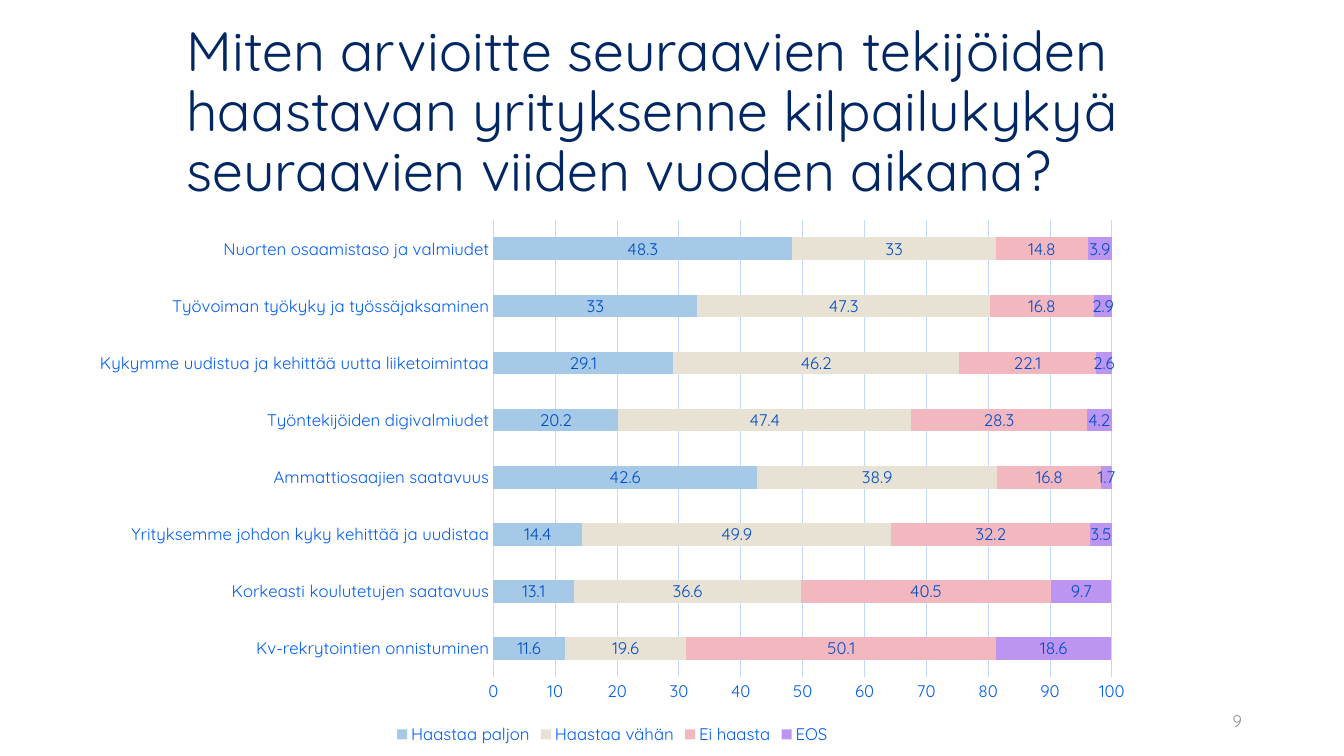
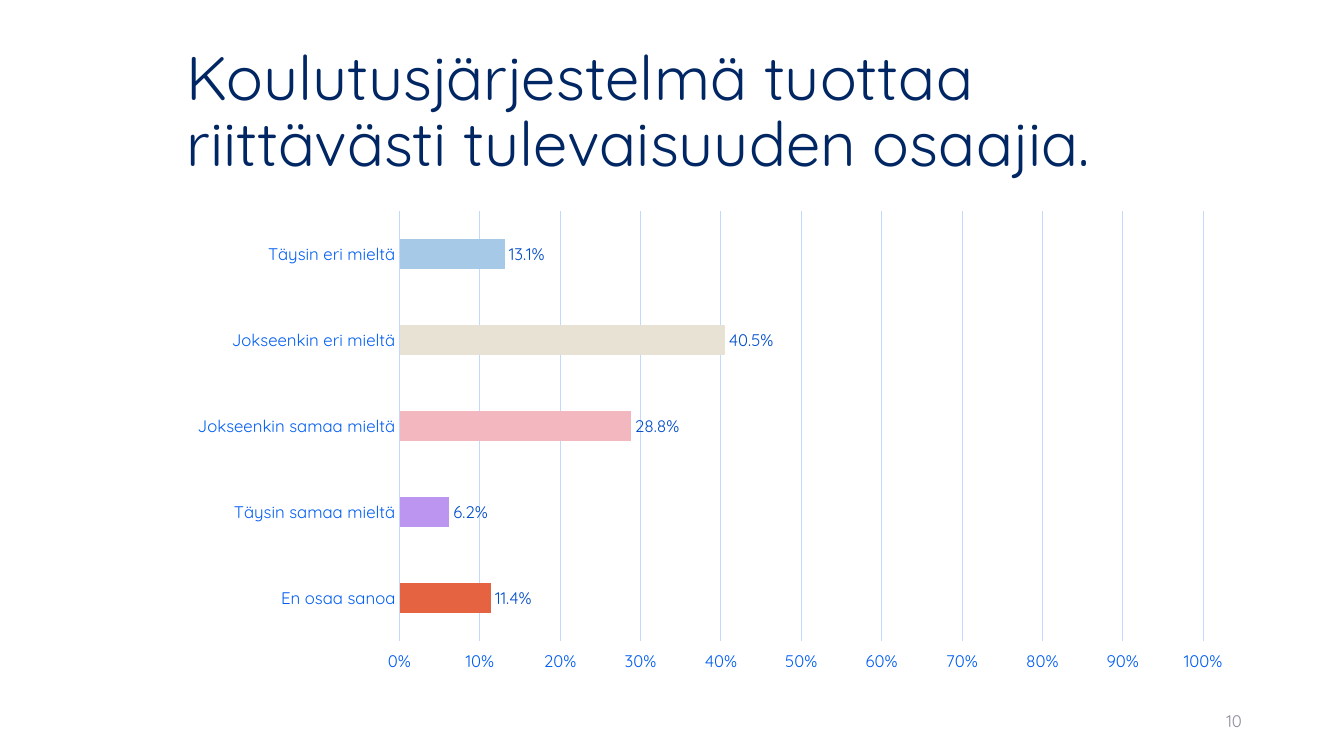
from dataclasses import dataclass

from pptx import Presentation
from pptx.chart.data import CategoryChartData
from pptx.dml.color import RGBColor
from pptx.enum.chart import (
    XL_CHART_TYPE,
    XL_LABEL_POSITION,
    XL_LEGEND_POSITION,
    XL_TICK_LABEL_POSITION,
    XL_TICK_MARK,
)
from pptx.enum.text import MSO_ANCHOR, PP_ALIGN
from pptx.util import Inches, Pt


@dataclass(frozen=True)
class Theme:
    font: str = "Quicksand"
    navy: str = "002663"
    axis: str = "005DF3"
    label: str = "004DCA"
    grid: str = "C1D9FF"
    number: str = "8C8E9F"
    bars: tuple = ("A5C9E7", "E8E2D5", "F2B7BF", "BB95EF", "E66342")
    small: float = 12
    base: float = 10
    line: float = 0.75


THEME = Theme()
TITLE_BOX = (1.75, 0.4, 10.59, 1.45)
NUMBER_BOX = (9.42, 6.95, 3, 0.4)

FACTORS = (
    ("Kv-rekrytointien onnistuminen", (11.6, 19.6, 50.1, 18.6)),
    ("Korkeasti koulutetujen saatavuus", (13.1, 36.6, 40.5, 9.7)),
    ("Yrityksemme johdon kyky kehittää ja uudistaa", (14.4, 49.9, 32.2, 3.5)),
    ("Ammattiosaajien saatavuus", (42.6, 38.9, 16.8, 1.7)),
    ("Työntekijöiden digivalmiudet", (20.2, 47.4, 28.3, 4.2)),
    ("Kykymme uudistua ja kehittää uutta liiketoimintaa", (29.1, 46.2, 22.1, 2.6)),
    ("Työvoiman työkyky ja työssäjaksaminen", (33, 47.3, 16.8, 2.9)),
    ("Nuorten osaamistaso ja valmiudet", (48.3, 33, 14.8, 3.9)),
)
RATINGS = ("Haastaa paljon", "Haastaa vähän", "Ei haasta", "EOS")
OPINIONS = (
    ("Täysin eri mieltä", (0.131,)),
    ("Jokseenkin eri mieltä", (0.405,)),
    ("Jokseenkin samaa mieltä", (0.288,)),
    ("Täysin samaa mieltä", (0.062,)),
    ("En osaa sanoa", (0.114,)),
)


def style_font(font, size, color):
    font.name = THEME.font
    font.size = Pt(size)
    font.color.rgb = RGBColor.from_string(color)


def paint(fill, color):
    fill.solid()
    fill.fore_color.rgb = RGBColor.from_string(color)


def style_line(line):
    line.width = Pt(THEME.line)
    line.color.rgb = RGBColor.from_string(THEME.grid)


def add_text(page, box, text, size, color, align=PP_ALIGN.LEFT, spacing=1.0):
    frame = page.shapes.add_textbox(*map(Inches, box)).text_frame
    frame.word_wrap = True
    frame.vertical_anchor = MSO_ANCHOR.MIDDLE
    para = frame.paragraphs[0]
    para.text = text
    para.alignment = align
    para.line_spacing = spacing
    style_font(para.font, size, color)


def add_page(deck, title, title_size, number):
    page = deck.slides.add_slide(deck.slide_layouts[6])
    add_text(page, TITLE_BOX, title, title_size, THEME.navy, spacing=0.9)
    add_text(page, NUMBER_BOX, str(number), THEME.small, THEME.number, PP_ALIGN.RIGHT)
    return page


def add_bar_chart(page, box, kind, names, rows, top, axis_format, label_format, position):
    data = CategoryChartData()
    data.categories = [category for category, _ in rows]
    for name, values in zip(names, zip(*(values for _, values in rows))):
        data.add_series(name, values)
    chart = page.shapes.add_chart(kind, *map(Inches, box), data).chart
    chart.has_title = False
    chart.has_legend = False
    style_font(chart.font, THEME.base, THEME.navy)

    for axis in (chart.category_axis, chart.value_axis):
        axis.major_tick_mark = axis.minor_tick_mark = XL_TICK_MARK.NONE
        style_font(axis.tick_labels.font, THEME.small, THEME.axis)
    style_line(chart.category_axis.format.line)
    scale = chart.value_axis
    scale.minimum_scale = 0
    scale.maximum_scale = top
    scale.major_unit = top / 10
    scale.tick_labels.number_format = axis_format
    scale.tick_labels.number_format_is_linked = False
    scale.format.line.fill.background()
    scale.has_major_gridlines = True
    style_line(scale.major_gridlines.format.line)

    plot = chart.plots[0]
    plot.vary_by_categories = False
    for series, color in zip(plot.series, THEME.bars):
        series.invert_if_negative = False
        paint(series.format.fill, color)
        labels = series.data_labels
        labels.show_value = True
        labels.number_format = label_format
        labels.number_format_is_linked = False
        labels.position = position
        style_font(labels.font, THEME.small, THEME.label)
    return chart


def add_factor_chart(page, box):
    chart = add_bar_chart(page, box, XL_CHART_TYPE.BAR_STACKED, RATINGS, FACTORS,
                          100, "General", "General", XL_LABEL_POSITION.CENTER)
    chart.plots[0].gap_width = 150
    chart.plots[0].overlap = 100
    chart.has_legend = True
    chart.legend.position = XL_LEGEND_POSITION.BOTTOM
    chart.legend.include_in_layout = False
    style_font(chart.legend.font, THEME.small, THEME.axis)


def add_opinion_chart(page, box):
    chart = add_bar_chart(page, box, XL_CHART_TYPE.BAR_CLUSTERED, ("Series 1",), OPINIONS,
                          1, "0%", "0.0%", XL_LABEL_POSITION.OUTSIDE_END)
    chart.plots[0].gap_width = 182
    chart.category_axis.reverse_order = True
    chart.value_axis.tick_label_position = XL_TICK_LABEL_POSITION.HIGH
    for index, color in enumerate(THEME.bars):
        paint(chart.plots[0].series[0].points[index].format.fill, color)


def main():
    deck = Presentation()
    deck.slide_width, deck.slide_height = Inches(40 / 3), Inches(7.5)
    page = add_page(deck, "Miten arvioitte seuraavien tekijöiden haastavan yrityksenne "
                    "kilpailukykyä seuraavien viiden vuoden aikana?", 39.6, 9)
    add_factor_chart(page, (0.78, 2.08, 10.59, 5.35))
    page = add_page(deck, "Koulutusjärjestelmä tuottaa riittävästi tulevaisuuden osaajia.", 44, 10)
    add_opinion_chart(page, (1.75, 2, 10.59, 4.76))
    deck.save("out.pptx")


if __name__ == "__main__":
    main()
